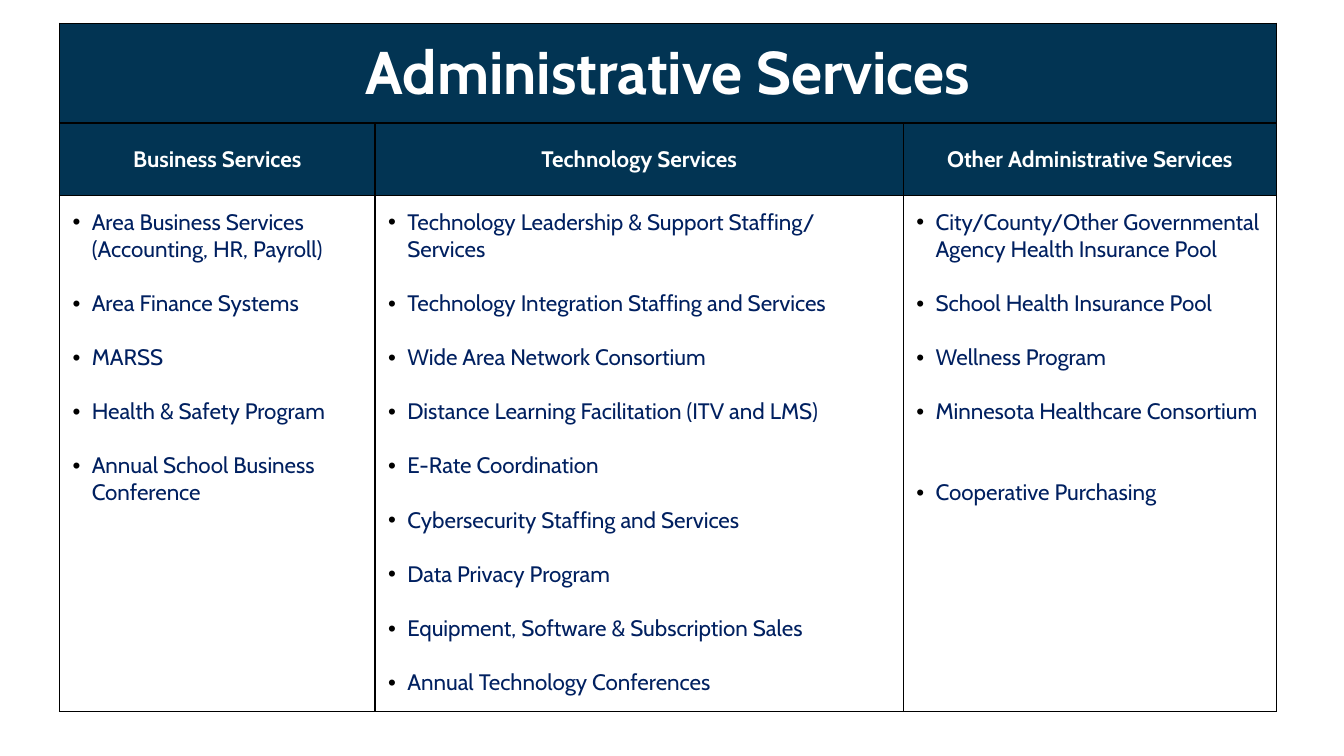
"""Build the Administrative Services table slide."""
import pptx
import pptx.dml.color
import pptx.enum.text
import pptx.oxml
import pptx.oxml.ns
import pptx.util
from lxml import etree

TITLE = "Administrative Services"
SERVICES = {
    "Business Services": [
        "Area Business Services (Accounting, HR, Payroll)",
        "Area Finance Systems",
        "MARSS",
        "Health & Safety Program",
        "Annual School Business Conference",
    ],
    "Technology Services": [
        "Technology Leadership & Support Staffing/ Services",
        "Technology Integration Staffing and Services",
        "Wide Area Network Consortium",
        "Distance Learning Facilitation (ITV and LMS)",
        "E-Rate Coordination",
        "Cybersecurity Staffing and Services",
        "Data Privacy Program",
        "Equipment, Software & Subscription Sales",
        "Annual Technology Conferences",
    ],
    "Other Administrative Services": [
        "City/County/Other Governmental Agency Health Insurance Pool",
        "School Health Insurance Pool",
        "Wellness Program",
        "Minnesota Healthcare Consortium",
        "Cooperative Purchasing",
    ],
}
DOUBLE_GAP_BEFORE = {"Cooperative Purchasing"}
COLORS = {"header": "023453", "header_text": "FFFFFF", "body": "FFFFFF",
          "body_text": "002060", "line": "000000"}
FONT = "Cabin"
TITLE_SIZE, TEXT_SIZE, LINE_PITCH = 43, 16, 19.35
SLIDE_SIZE = (13.33, 7.5)
LEFT, TOP = 0.59, 0.23
COLUMN_WIDTHS = (3.13, 5.24, 3.7)
ROW_HEIGHTS = (0.99, 0.72, 5.12)
MARGIN, INDENT = 0.13, 0.19


def color(name):
    return pptx.dml.color.RGBColor.from_string(COLORS[name])


def style_cell(cell, fill, anchor):
    cell.margin_left = cell.margin_right = pptx.util.Inches(MARGIN)
    cell.margin_top = cell.margin_bottom = pptx.util.Inches(MARGIN)
    cell.vertical_anchor = anchor
    properties = cell._tc.get_or_add_tcPr()
    for side in "LRTB":
        border = etree.SubElement(properties, pptx.oxml.ns.qn(f"a:ln{side}"),
                                  w=str(pptx.util.Pt(1)))
        paint = etree.SubElement(border, pptx.oxml.ns.qn("a:solidFill"))
        etree.SubElement(paint, pptx.oxml.ns.qn("a:srgbClr"), val=COLORS["line"])
    cell.fill.solid()
    cell.fill.fore_color.rgb = color(fill)


def style_text(paragraph, size, text_color, bold):
    for run in paragraph.runs:
        run.font.name = FONT
        run.font.size = pptx.util.Pt(size)
        run.font.bold = bold
        run.font.color.rgb = color(text_color)


def add_bullet(paragraph):
    properties = paragraph._p.get_or_add_pPr()
    indent = pptx.util.Inches(INDENT)
    properties.set("marL", str(indent))
    properties.set("indent", str(-indent))
    bullet_color = etree.SubElement(properties, pptx.oxml.ns.qn("a:buClr"))
    etree.SubElement(bullet_color, pptx.oxml.ns.qn("a:srgbClr"), val=COLORS["line"])
    etree.SubElement(properties, pptx.oxml.ns.qn("a:buFont"), typeface="Arial")
    etree.SubElement(properties, pptx.oxml.ns.qn("a:buChar"), char="•")


def write_header(cell, text, size):
    cell.text_frame.text = text
    paragraph = cell.text_frame.paragraphs[0]
    paragraph.alignment = pptx.enum.text.PP_ALIGN.CENTER
    style_text(paragraph, size, "header_text", True)


def write_list(cell, items):
    cell.text_frame.text = "\n".join(items)
    for position, paragraph in enumerate(cell.text_frame.paragraphs):
        if position:
            lines = 2 if paragraph.text in DOUBLE_GAP_BEFORE else 1
            paragraph.space_before = pptx.util.Pt(lines * LINE_PITCH)
        add_bullet(paragraph)
        style_text(paragraph, TEXT_SIZE, "body_text", False)


def main():
    presentation = pptx.Presentation()
    presentation.slide_width, presentation.slide_height = map(pptx.util.Inches, SLIDE_SIZE)
    slide = presentation.slides.add_slide(presentation.slide_layouts[6])
    bounds = (LEFT, TOP, sum(COLUMN_WIDTHS), sum(ROW_HEIGHTS))
    table = slide.shapes.add_table(len(ROW_HEIGHTS), len(COLUMN_WIDTHS),
                                   *map(pptx.util.Inches, bounds)).table
    table.first_row = table.horz_banding = False
    for column, width in zip(table.columns, COLUMN_WIDTHS):
        column.width = pptx.util.Inches(width)
    anchors = pptx.enum.text.MSO_ANCHOR
    for index, (row, height) in enumerate(zip(table.rows, ROW_HEIGHTS)):
        row.height = pptx.util.Inches(height)
        for cell in row.cells:
            if index < 2:
                style_cell(cell, "header", anchors.MIDDLE)
            else:
                style_cell(cell, "body", anchors.TOP)
    table.cell(0, 0).merge(table.cell(0, len(COLUMN_WIDTHS) - 1))
    write_header(table.cell(0, 0), TITLE, TITLE_SIZE)
    for index, (heading, items) in enumerate(SERVICES.items()):
        write_header(table.cell(1, index), heading, TEXT_SIZE)
        write_list(table.cell(2, index), items)
    presentation.save("out.pptx")


if __name__ == "__main__":
    main()
